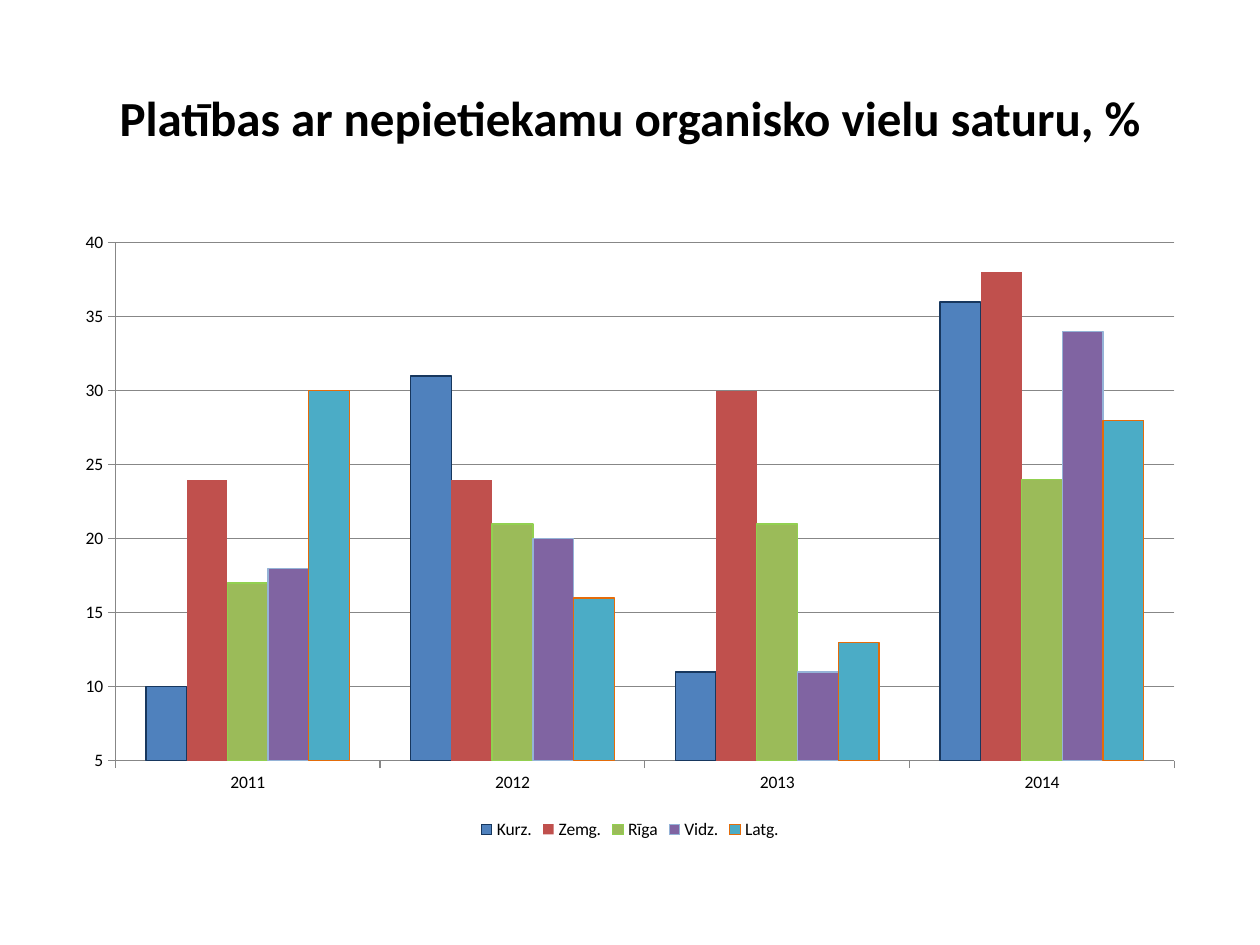
from pptx import Presentation
from pptx.chart.data import CategoryChartData
from pptx.dml.color import RGBColor
from pptx.enum.chart import XL_CHART_TYPE, XL_LEGEND_POSITION, XL_TICK_MARK
from pptx.enum.text import MSO_ANCHOR, PP_ALIGN
from pptx.util import Inches, Pt

COLUMNS = XL_CHART_TYPE.COLUMN_CLUSTERED
BOTTOM = XL_LEGEND_POSITION.BOTTOM
OUTSIDE, NO_TICK = XL_TICK_MARK.OUTSIDE, XL_TICK_MARK.NONE
MIDDLE, CENTER = MSO_ANCHOR.MIDDLE, PP_ALIGN.CENTER

TITLE = "Platības ar nepietiekamu organisko vielu saturu, %"
YEARS = ["2011", "2012", "2013", "2014"]
REGIONS = [
    ("Kurz.", [10, 31, 11, 36], "4F81BD", "17375E"),
    ("Zemg.", [24, 24, 30, 38], "C0504D", None),
    ("Rīga", [17, 21, 21, 24], "9BBB59", "92D050"),
    ("Vidz.", [18, 20, 11, 34], "8064A2", "95B3D7"),
    ("Latg.", [30, 16, 13, 28], "4BACC6", "E46C0A"),
]
FONT, BLACK, GRAY = "Calibri", "000000", "878787"
WIDTH, HEIGHT = Inches(10), Inches(7.5)
LEFT, CONTENT_WIDTH = int(WIDTH * 0.05), int(WIDTH * 0.9)
TITLE_TOP, TITLE_HEIGHT = int(HEIGHT * 0.04), Inches(1.25)
CHART_TOP, CHART_HEIGHT = Inches(1.75), int(HEIGHT * 0.66)


def color(value):
    return RGBColor.from_string(value)


def style_font(font, size, bold=False):
    font.name, font.size, font.bold = FONT, Pt(size), bold
    font.color.rgb = color(BLACK)


def style_line(line, value):
    line.color.rgb = color(value)
    line.width = Pt(0.75)


def add_title(slide):
    box = slide.shapes.add_textbox(LEFT, TITLE_TOP, CONTENT_WIDTH, TITLE_HEIGHT)
    frame = box.text_frame
    frame.word_wrap = True
    frame.vertical_anchor = MIDDLE
    paragraph = frame.paragraphs[0]
    paragraph.text = TITLE
    paragraph.alignment = CENTER
    style_font(paragraph.font, 28, True)


def add_region_chart(slide):
    data = CategoryChartData()
    data.categories = YEARS
    for name, values, _, _ in REGIONS:
        data.add_series(name, values)
    chart = slide.shapes.add_chart(
        COLUMNS, LEFT, CHART_TOP, CONTENT_WIDTH, CHART_HEIGHT, data
    ).chart
    chart.has_title = False
    style_font(chart.font, 10)
    chart.has_legend = True
    chart.legend.position = BOTTOM
    chart.legend.include_in_layout = False

    plot = chart.plots[0]
    plot.gap_width = 150
    plot.overlap = 0
    plot.vary_by_categories = False
    for series, (_, _, fill, outline) in zip(plot.series, REGIONS):
        series.invert_if_negative = False
        series.format.fill.solid()
        series.format.fill.fore_color.rgb = color(fill)
        if outline:
            style_line(series.format.line, outline)

    value_axis = chart.value_axis
    value_axis.minimum_scale, value_axis.maximum_scale = 5, 40
    value_axis.major_unit = 5
    value_axis.has_major_gridlines = True
    style_line(value_axis.major_gridlines.format.line, GRAY)
    for axis in (chart.category_axis, value_axis):
        axis.major_tick_mark, axis.minor_tick_mark = OUTSIDE, NO_TICK
        style_line(axis.format.line, GRAY)


def main():
    presentation = Presentation()
    presentation.slide_width, presentation.slide_height = WIDTH, HEIGHT
    slide = presentation.slides.add_slide(presentation.slide_layouts[6])
    add_title(slide)
    add_region_chart(slide)
    presentation.save("out.pptx")


if __name__ == "__main__":
    main()
